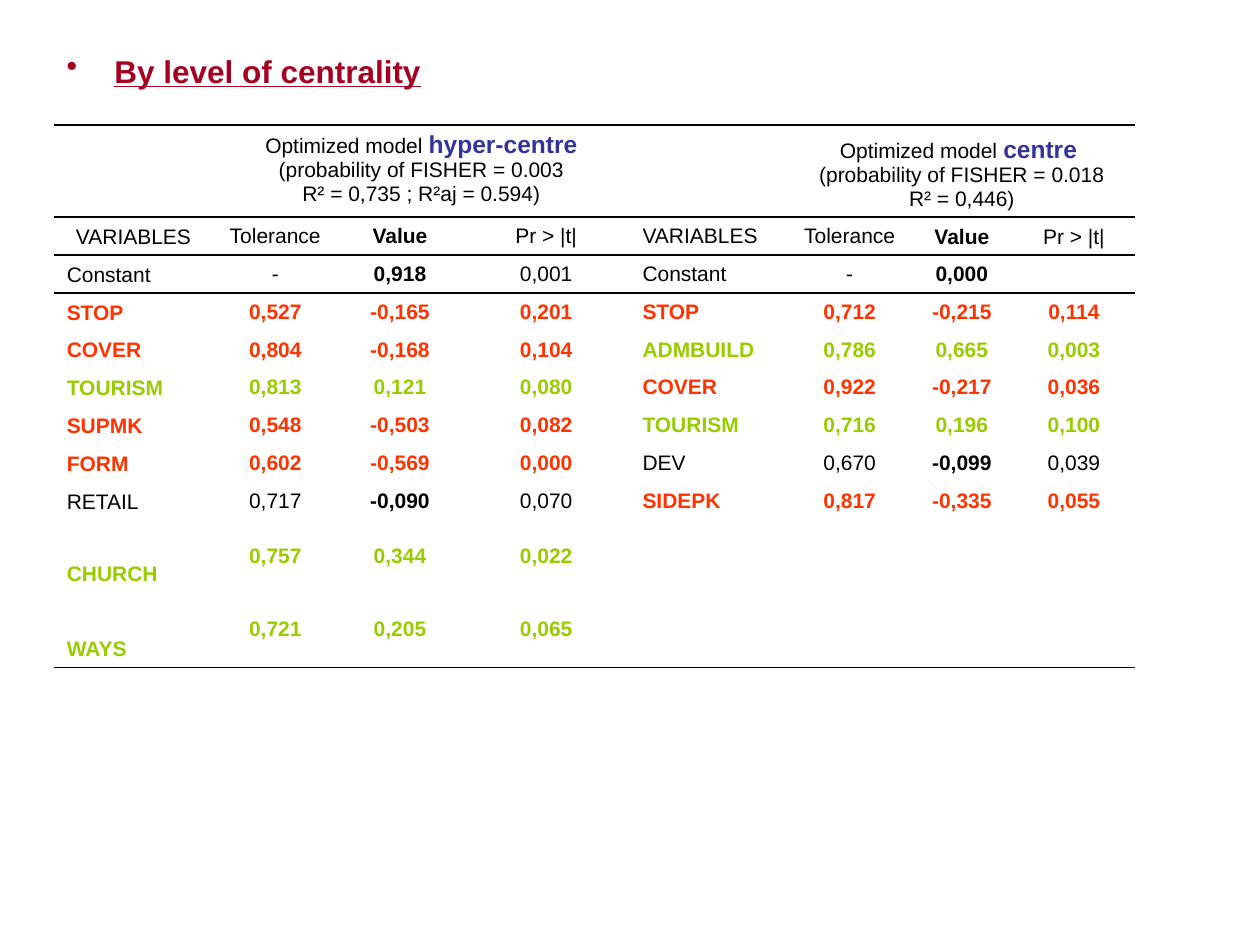
import pptx
import pptx.util
import pptx.dml.color
import pptx.enum.text
import pptx.oxml
import pptx.oxml.ns
import lxml.etree

Inches, Pt = pptx.util.Inches, pptx.util.Pt
ALIGN, ANCHOR = pptx.enum.text.PP_ALIGN, pptx.enum.text.MSO_ANCHOR
qn = pptx.oxml.ns.qn
BLACK, RED, GREEN, BLUE, CRIMSON = "000000", "FF3300", "99CC00", "333399", "A50021"
NO_STYLE = "{2D5ABB26-0587-4C30-8999-92F81FD0307C}"


def add_run(p, text, color=BLACK, **fmt):
    r = p.add_run()
    r.text = text
    for name, value in {"name": "Arial", "size": Pt(12), "bold": False, **fmt}.items():
        setattr(r.font, name, value)
    r.font.color.rgb = pptx.dml.color.RGBColor.from_string(color)


def add_border(cell, side):
    """Draw a 1 pt black line on one side of the cell: T or B."""
    ln = lxml.etree.SubElement(cell._tc.get_or_add_tcPr(), qn("a:ln" + side), w="12700")
    fill = lxml.etree.SubElement(ln, qn("a:solidFill"))
    lxml.etree.SubElement(fill, qn("a:srgbClr"), val=BLACK)


prs = pptx.Presentation()
prs.slide_width, prs.slide_height = Inches(10), Inches(7.5)
s = prs.slides.add_slide(prs.slide_layouts[6])

# Title with a hanging bullet
tf = s.shapes.add_textbox(Inches(0.43), Inches(0.36), Inches(9), Inches(0.35)).text_frame
tf.word_wrap = True
p = tf.paragraphs[0]
add_run(p, "By level of centrality", CRIMSON, size=Pt(18), bold=True, underline=True)
pPr = p._p.get_or_add_pPr()
pPr.set("marL", str(Inches(0.38)))
pPr.set("indent", str(-Inches(0.38)))
lxml.etree.SubElement(pPr, qn("a:buChar"), char="•")

# Each model: first column, name, notes, then one line per variable
models = [
    (0, "hyper-centre", ["(probability of FISHER = 0.003", "R² = 0,735 ; R²aj = 0.594)"], [
        ("Constant", "-", "0,918", "0,001", BLACK),
        ("STOP", "0,527", "-0,165", "0,201", RED),
        ("COVER", "0,804", "-0,168", "0,104", RED),
        ("TOURISM", "0,813", "0,121", "0,080", GREEN),
        ("SUPMK", "0,548", "-0,503", "0,082", RED),
        ("FORM", "0,602", "-0,569", "0,000", RED),
        ("RETAIL", "0,717", "-0,090", "0,070", BLACK),
        ("CHURCH", "0,757", "0,344", "0,022", GREEN),
        ("WAYS", "0,721", "0,205", "0,065", GREEN),
    ]),
    (4, "centre ", ["(probability of FISHER = 0.018", "R² = 0,446)"], [
        ("Constant", "-", "0,000", "", BLACK),
        ("STOP", "0,712", "-0,215", "0,114", RED),
        ("ADMBUILD", "0,786", "0,665", "0,003", GREEN),
        ("COVER", "0,922", "-0,217", "0,036", RED),
        ("TOURISM", "0,716", "0,196", "0,100", GREEN),
        ("DEV", "0,670", "-0,099", "0,039", BLACK),
        ("SIDEPK", "0,817", "-0,335", "0,055", RED),
    ]),
]
headings = ("VARIABLES", "Tolerance", "Value", "Pr > |t|", BLACK)
col_widths = [1.26, 0.99, 0.99, 1.33, 1.26, 0.97, 0.81, 0.97]
row_heights = [0.73] + [0.3] * 8 + [0.57, 0.6]
last_row = len(row_heights) - 1

frame = s.shapes.add_table(len(row_heights), len(col_widths), Inches(0.43), Inches(0.99),
                           Inches(sum(col_widths)), Inches(sum(row_heights)))
table = frame.table
table.first_row = table.horz_banding = False
table._tbl.tblPr.find(qn("a:tableStyleId")).text = NO_STYLE
for col, width in zip(table.columns, col_widths):
    col.width = Inches(width)
for row, height in zip(table.rows, row_heights):
    row.height = Inches(height)

for first, model, notes, variables in models:
    title = table.cell(0, first + 1)
    title.merge(table.cell(0, first + 3))
    title.vertical_anchor = ANCHOR.BOTTOM if first else ANCHOR.TOP
    p = title.text_frame.paragraphs[0]
    p.alignment = ALIGN.CENTER
    add_run(p, "Optimized model ")
    add_run(p, model, BLUE, size=Pt(14), bold=True)
    for note in notes:
        p = title.text_frame.add_paragraph()
        p.alignment = ALIGN.CENTER
        add_run(p, note)

    for i, (*texts, color) in enumerate([headings] + variables, 1):
        for j, text in enumerate(texts):
            cell = table.cell(i, first + j)
            low = first + j == 0 or (i == 1 and first + j >= 6)
            cell.vertical_anchor = ANCHOR.BOTTOM if low else ANCHOR.MIDDLE
            p = cell.text_frame.paragraphs[0]
            centred = j > 0 or (i == 1 and first == 0)
            p.alignment = ALIGN.CENTER if centred else ALIGN.LEFT
            if text:
                add_run(p, text, color, bold=j == 2 or color != BLACK)

for i in range(len(row_heights)):
    for j in range(len(col_widths)):
        cell = table.cell(i, j)
        if not cell.text:
            end = lxml.etree.SubElement(cell.text_frame.paragraphs[0]._p, qn("a:endParaRPr"))
            end.set("sz", "1200")
        if i <= 2:
            add_border(cell, "T")
        if i in (0, 1, last_row):
            add_border(cell, "B")
        cell.fill.background()

prs.save("out.pptx")
